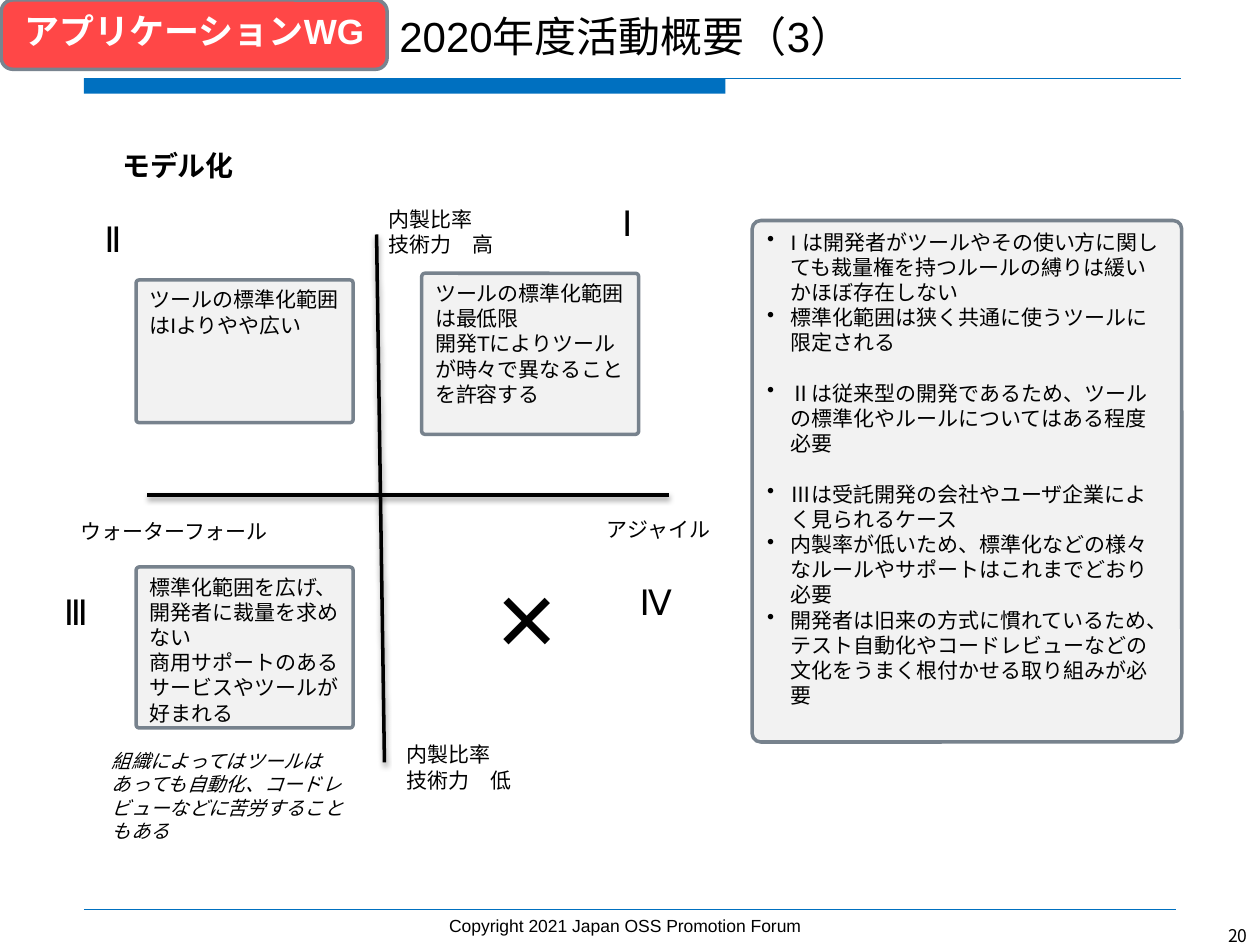
from lxml import etree
from pptx import Presentation
from pptx.dml.color import RGBColor
from pptx.enum import shapes, text
from pptx.oxml import ns
from pptx.util import Pt

# Content: boxes are (left, top, width, height) in points
TITLE = "2020年度活動概要（3）"
HEADING = "モデル化"
BANNER = "アプリケーションWG"
FOOTER = "Copyright 2021 Japan OSS Promotion Forum"
PAGE = "20"
GROUPS = [
    ["I は開発者がツールやその使い方に関しても裁量権を持つルールの縛りは緩いかほぼ存在しない",
     "標準化範囲は狭く共通に使うツールに限定される"],
    ["Ⅱは従来型の開発であるため、ツールの標準化やルールについてはある程度必要"],
    ["Ⅲは受託開発の会社やユーザ企業によく見られるケース",
     "内製率が低いため、標準化などの様々なルールやサポートはこれまでどおり必要",
     "開発者は旧来の方式に慣れているため、テスト自動化やコードレビューなどの文化をうまく根付かせる取り組みが必要"],
]
CARDS = [
    ((77.8, 160, 124, 81.5), ["ツールの標準化範囲はIよりやや広い"]),
    ((77.8, 324, 124, 92), ["標準化範囲を広げ、開発者に裁量を求めない",
                            "商用サポートのあるサービスやツールが好まれる"]),
    ((241, 156.2, 124, 92), ["ツールの標準化範囲は最低限",
                             "開発Tによりツールが時々で異なることを許容する"]),
]
AXIS_LABELS = [
    ((339.8, 291.6, 91, 22), ["アジャイル"]),
    ((38.9, 292.6, 124, 22), ["ウォーターフォール"]),
    ((215, 114.5, 91, 36.5), ["内製比率", "技術力　高"]),
    ((225.4, 420.5, 91, 36.5), ["内製比率", "技術力　低"]),
]
QUADRANTS = {"Ⅰ": (348.5, 111.5), "Ⅱ": (52.6, 121),
             "Ⅲ": (29.5, 334), "Ⅳ": (358.5, 328.3)}
CROSS = ((276.5, 311.8, 78.5, 80), ["×"])
NOTE = ((56.9, 424.8, 153.4, 47.5),
        ["組織によってはツールはあっても自動化、コードレビューなどに苦労することもある"])
AXES = [(215.2, 134, 219.7, 435.6), (382.3, 283, 84.2, 283)]

BLACK, WHITE, BLUE = "000000", "FFFFFF", "0070C0"
PANEL_FILL, PANEL_LINE = "F2F2F2", "77828D"
RED, BANNER_LINE = "FF4747", "79848F"
LINE_GAP = 14.4


def rgb(value):
    return RGBColor.from_string(value)


def place(sp, box):
    for name, value in zip(("left", "top", "width", "height"), box):
        setattr(sp, name, Pt(value))


def write(sp, lines, size=12, color=BLACK, align=text.PP_ALIGN.LEFT,
          anchor=text.MSO_ANCHOR.TOP, **font):
    """Fill a shape with one paragraph per line."""
    tf = sp.text_frame
    tf.word_wrap, tf.auto_size = True, text.MSO_AUTO_SIZE.NONE
    tf.vertical_anchor = anchor
    look = {"size": Pt(size), "name": "Arial", **font}
    for i, line in enumerate(lines):
        p = tf.paragraphs[0] if i == 0 else tf.add_paragraph()
        p.alignment, p.space_before = align, Pt(0)
        r = p.add_run()
        r.text = line
        for name, value in look.items():
            setattr(r.font, name, value)
        r.font.color.rgb = rgb(color)
    return tf.paragraphs


def indent(p, left, first, bullet=None):
    ppr = p._p.get_or_add_pPr()
    ppr.set("marL", str(Pt(left)))
    ppr.set("indent", str(Pt(first)))
    if bullet:
        etree.SubElement(ppr, ns.qn("a:buChar")).set("char", bullet)
    else:
        etree.SubElement(ppr, ns.qn("a:buNone"))


def add_text(s, box, lines, **look):
    return write(s.shapes.add_textbox(*map(Pt, box)), lines, **look)


def add_box(s, kind, box, fill, line=None, round_by=None):
    sp = s.shapes.add_shape(kind, *map(Pt, box))
    sp.shadow.inherit = False
    sp.fill.solid()
    sp.fill.fore_color.rgb = rgb(fill)
    if line:
        sp.line.color.rgb, sp.line.width = rgb(line), Pt(2)
    else:
        sp.line.fill.background()
    if round_by is not None:
        sp.adjustments[0] = round_by
    return sp


def add_line(s, ends, color, width, shadow=False):
    line = s.shapes.add_connector(shapes.MSO_CONNECTOR.STRAIGHT, *map(Pt, ends))
    line.line.color.rgb, line.line.width = rgb(color), Pt(width)
    effects = etree.SubElement(line._element.spPr, ns.qn("a:effectLst"))
    if shadow:
        outer = etree.SubElement(effects, ns.qn("a:outerShdw"), blurRad=str(Pt(3.1)),
                                 dist=str(Pt(1.6)), dir="5400000", rotWithShape="0")
        shade = etree.SubElement(outer, ns.qn("a:srgbClr"), val=BLACK)
        etree.SubElement(shade, ns.qn("a:alpha"), val="38000")


def main():
    prs = Presentation()
    prs.slide_width, prs.slide_height = Pt(720), Pt(540)
    s = prs.slides.add_slide(prs.slide_layouts[1])
    rounded = shapes.MSO_SHAPE.ROUNDED_RECTANGLE

    # Title and heading
    title, body = s.shapes.title, s.placeholders[1]
    place(title, (221, 0.7, 340, 43))
    write(title, [TITLE], size=24, anchor=text.MSO_ANCHOR.MIDDLE)[0].line_spacing = 0.93
    place(body, (26.6, 80.6, 661, 32.4))
    heading = write(body, [HEADING], size=16, bold=True)[0]
    heading.line_spacing = 1.04
    indent(heading, 36, 0)

    # Header and footer
    add_box(s, shapes.MSO_SHAPE.RECTANGLE, (48, 44.8, 366.5, 8.8), BLUE)
    add_line(s, (48, 44.8, 674.6, 44.8), BLUE, 0.75)
    add_line(s, (48, 519.6, 672, 519.6), BLUE, 0.25)
    add_text(s, (178.6, 519.6, 357, 15), [FOOTER], size=10, align=text.PP_ALIGN.CENTER)
    add_text(s, (674.6, 525, 45.4, 15), [PAGE], size=10, align=text.PP_ALIGN.RIGHT,
             name="Noto Sans CJK JP")

    # Axes and their labels
    for ends in AXES:
        add_line(s, ends, BLACK, 2, shadow=True)
    for box, lines in AXIS_LABELS:
        add_text(s, box, lines)
    for numeral, corner in QUADRANTS.items():
        add_text(s, (*corner, 39, 31.5), [numeral], size=20)
    add_text(s, *CROSS, size=60)
    add_text(s, *NOTE, size=11, italic=True)

    # Quadrant cards
    for box, lines in CARDS:
        write(add_box(s, rounded, box, PANEL_FILL, PANEL_LINE, 0.02), lines)

    # Explanation panel, with a gap before each later group
    panel = add_box(s, rounded, (429.8, 126, 245.5, 298), PANEL_FILL, PANEL_LINE, 0.02)
    paragraphs = iter(write(panel, sum(GROUPS, [])))
    for g, group in enumerate(GROUPS):
        for i in range(len(group)):
            p = next(paragraphs)
            p.space_before = Pt(LINE_GAP if g and i == 0 else 0)
            indent(p, 13.5, -13.5, "•")

    # Working group banner
    banner = add_box(s, rounded, (0.7, 0, 220.5, 39.6), RED, BANNER_LINE)
    write(banner, [BANNER], size=20, color=WHITE, align=text.PP_ALIGN.CENTER, bold=True)

    prs.save("out.pptx")


if __name__ == "__main__":
    main()
